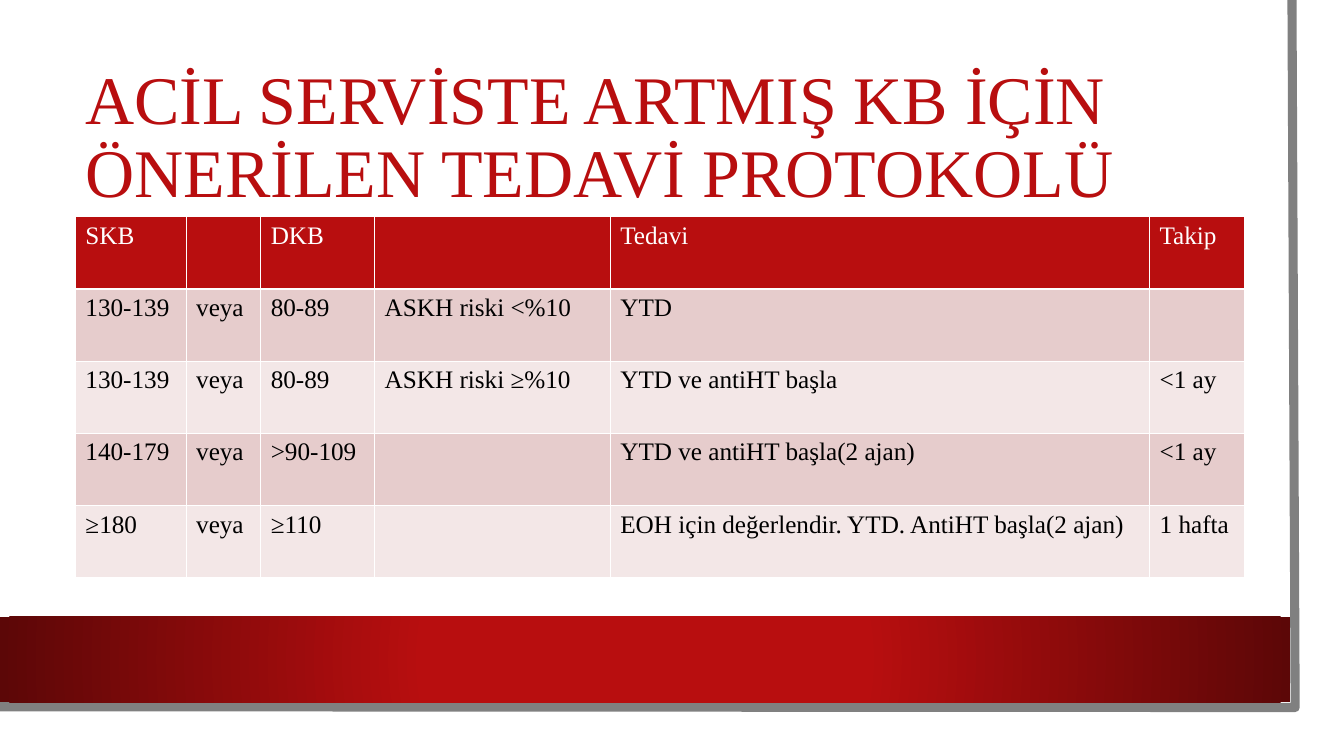
from typing import NamedTuple

import pptx
import pptx.dml.color
import pptx.enum.shapes
import pptx.enum.text
import pptx.oxml
import pptx.oxml.ns
import pptx.util
from pptx.util import Cm

FONT = "Times New Roman"
RED, DARK_RED, GREY = "B80E0F", "5C0707", "808080"
WHITE, BLACK = "FFFFFF", "000000"
ROW_FILLS = ("E6CCCC", "F3E7E7")
COLUMN_WIDTHS = (2.79, 1.88, 2.87, 5.94, 13.59, 2.39)
ROW_HEIGHT = 1.82


class Protocol(NamedTuple):
    systolic: str
    joiner: str
    diastolic: str
    risk: str
    treatment: str
    follow_up: str


HEADER = Protocol("SKB", "", "DKB", "", "Tedavi", "Takip")
PROTOCOLS = (
    Protocol("130-139", "veya", "80-89", "ASKH riski <%10", "YTD", ""),
    Protocol("130-139", "veya", "80-89", "ASKH riski ≥%10", "YTD ve antiHT başla", "<1 ay"),
    Protocol("140-179", "veya", ">90-109", "", "YTD ve antiHT başla(2 ajan)", "<1 ay"),
    Protocol("≥180", "veya", "≥110", "",
             "EOH için değerlendir. YTD. AntiHT başla(2 ajan)", "1 hafta"),
)


def rgb(color: str) -> pptx.dml.color.RGBColor:
    return pptx.dml.color.RGBColor.from_string(color)


def write(frame, text: str, *, size: float = 18, color: str = BLACK,
          line_spacing: float = 1.0) -> None:
    frame.text = text
    paragraph = frame.paragraphs[0]
    paragraph.alignment = pptx.enum.text.PP_ALIGN.LEFT
    paragraph.line_spacing = line_spacing
    for font in [paragraph.font] + [run.font for run in paragraph.runs]:
        font.name = FONT
        font.size = pptx.util.Pt(size)
        font.bold = False
        font.color.rgb = rgb(color)


def draw_page_edge(slide) -> None:
    """Draw the grey line along the right and bottom of the page."""
    outline = slide.shapes.build_freeform(Cm(32.56), 0)
    outline.add_line_segments([(Cm(32.64), Cm(17.83)), (Cm(-0.08), Cm(17.81))], close=False)
    edge = outline.convert_to_shape()
    edge.shadow.inherit = False
    edge.fill.background()
    edge.line.color.rgb = rgb(GREY)
    edge.line.width = pptx.util.Pt(6.5)


def draw_band(slide) -> None:
    """Draw the bottom band, shaded from its centre towards both ends."""
    band = slide.shapes.add_shape(pptx.enum.shapes.MSO_SHAPE.RECTANGLE,
                                  0, Cm(15.54), Cm(32.51), Cm(2.16))
    band.shadow.inherit = False
    band.line.fill.background()
    gradient = pptx.oxml.parse_xml(
        f'<a:gradFill {pptx.oxml.ns.nsdecls("a")} rotWithShape="1"><a:gsLst>'
        f'<a:gs pos="34000"><a:srgbClr val="{RED}"/></a:gs>'
        f'<a:gs pos="100000"><a:srgbClr val="{DARK_RED}"/></a:gs></a:gsLst>'
        '<a:path path="circle">'
        '<a:fillToRect l="50000" t="50000" r="50000" b="50000"/></a:path></a:gradFill>')
    geometry = band.element.spPr.find(pptx.oxml.ns.qn("a:prstGeom"))
    geometry.addnext(gradient)


def place_title(slide) -> None:
    title = slide.shapes.title
    title.left, title.top, title.width, title.height = Cm(1.9), Cm(1.9), Cm(28.88), Cm(3.2)
    frame = title.text_frame
    frame.word_wrap = True
    frame.auto_size = pptx.enum.text.MSO_AUTO_SIZE.NONE
    frame.vertical_anchor = pptx.enum.text.MSO_ANCHOR.MIDDLE
    write(frame, "ACİL SERVİSTE ARTMIŞ KB İÇİN ÖNERİLEN TEDAVİ PROTOKOLÜ",
          size=48.6, color=RED, line_spacing=0.9)


def draw_protocol_table(slide) -> None:
    rows = (HEADER, *PROTOCOLS)
    table = slide.shapes.add_table(
        len(rows), len(COLUMN_WIDTHS), Cm(1.9), Cm(5.46),
        Cm(sum(COLUMN_WIDTHS)), Cm(ROW_HEIGHT * len(rows))).table
    for column, width in zip(table.columns, COLUMN_WIDTHS):
        column.width = Cm(width)
    for index, (table_row, protocol) in enumerate(zip(table.rows, rows)):
        table_row.height = Cm(ROW_HEIGHT)
        is_header = index == 0
        fill = RED if is_header else ROW_FILLS[(index - 1) % 2]
        for cell, text in zip(table_row.cells, protocol):
            cell.fill.solid()
            cell.fill.fore_color.rgb = rgb(fill)
            write(cell.text_frame, text, color=WHITE if is_header else BLACK)


def main() -> None:
    presentation = pptx.Presentation()
    presentation.slide_width, presentation.slide_height = Cm(33.87), Cm(19.05)
    slide = presentation.slides.add_slide(presentation.slide_layouts[5])
    draw_page_edge(slide)
    draw_band(slide)
    place_title(slide)
    draw_protocol_table(slide)
    presentation.save("out.pptx")


if __name__ == "__main__":
    main()
